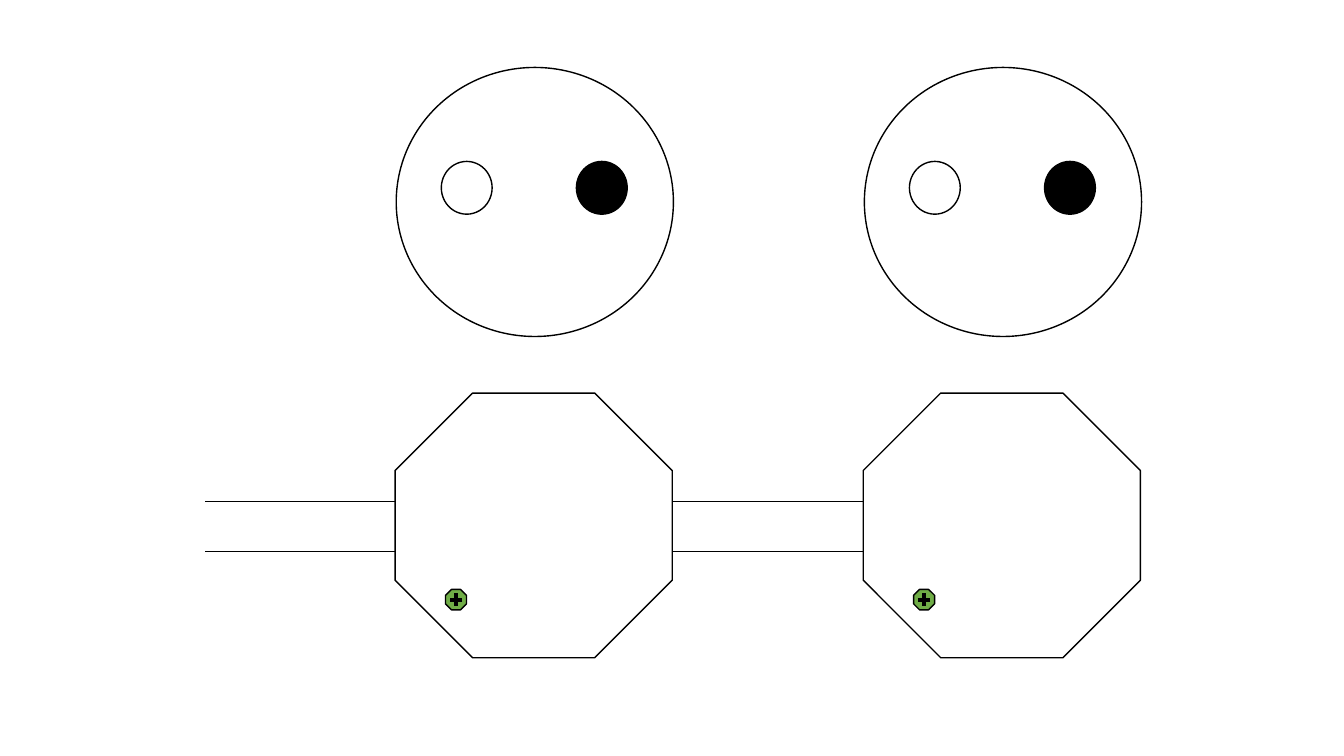
"""Draw two linked units, each with a round dial above an octagonal plate."""
import pptx
import pptx.dml.color
import pptx.enum.shapes
import pptx.oxml.ns
import pptx.util
from lxml import etree

Pt = pptx.util.Pt
SHAPE = pptx.enum.shapes.MSO_SHAPE
STRAIGHT = pptx.enum.shapes.MSO_CONNECTOR.STRAIGHT
BLACK, WHITE, GREEN = "000000", "FFFFFF", "70AD47"


def color(value):
    return pptx.dml.color.RGBColor.from_string(value)


class Drawing:
    def __init__(self, slide):
        self.slide = slide
        self.group = None
        self.left = 0

    def start_group(self, left):
        self.group = self.slide.shapes.add_group_shape()
        self.left = left

    def outline(self, element, width):
        element.line.color.rgb = color(BLACK)
        element.line.width = Pt(width)

    def shape(self, kind, x, y, width, height, fill=None):
        shape = self.group.shapes.add_shape(
            kind, Pt(self.left + x), Pt(y), Pt(width), Pt(height))
        shape.shadow.inherit = False
        if fill:
            shape.fill.solid()
            shape.fill.fore_color.rgb = color(fill)
        else:
            shape.fill.background()
        self.outline(shape, 1)

    def line(self, x1, y1, x2, y2, width):
        connector = self.group.shapes.add_connector(
            STRAIGHT, Pt(self.left + x1), Pt(y1), Pt(self.left + x2), Pt(y2))
        self.outline(connector, width)
        etree.SubElement(connector._element.spPr, pptx.oxml.ns.qn("a:effectLst"))


def draw_unit(drawing, left):
    drawing.start_group(left)
    drawing.shape(SHAPE.OVAL, 0.8, 48.2, 198, 192.2)
    for x, fill in ((33, None), (129.5, BLACK)):
        drawing.shape(SHAPE.OVAL, x, 115.3, 36.3, 37.7, fill)
    drawing.shape(SHAPE.OCTAGON, 0, 280.8, 198, 189, WHITE)
    for y in (358.1, 393.9):
        drawing.line(0, y, -135.6, y, 0.5)
    drawing.shape(SHAPE.OCTAGON, 36, 421, 15, 14.6, GREEN)
    drawing.line(43.4, 423.9, 43.4, 432.9, 3)
    drawing.line(47.9, 428.4, 38.9, 428.4, 3)


def main():
    presentation = pptx.Presentation()
    presentation.slide_width = Pt(960)
    presentation.slide_height = Pt(540)
    slide = presentation.slides.add_slide(presentation.slide_layouts[6])
    drawing = Drawing(slide)
    for left in (616.6, 282.2):
        draw_unit(drawing, left)
    presentation.save("out.pptx")


if __name__ == "__main__":
    main()
